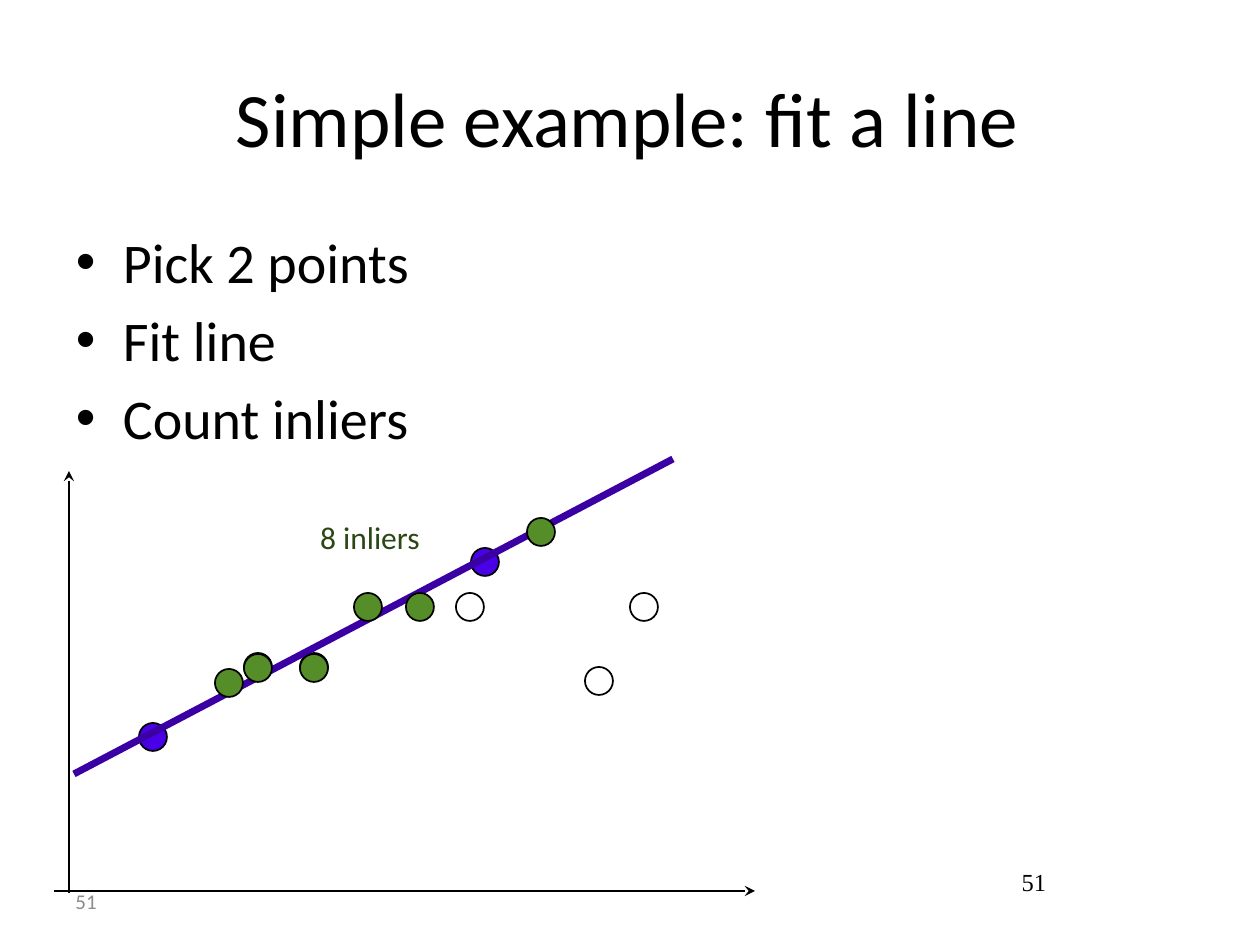
from pptx import Presentation
from pptx.dml.color import RGBColor
from pptx.enum.shapes import MSO_CONNECTOR, MSO_SHAPE
from pptx.enum.text import MSO_ANCHOR, PP_ALIGN
from pptx.oxml.ns import qn
from pptx.util import Pt
from lxml.etree import SubElement

PX_PER_INCH = 126
COLORS = {
    "black": "000000",
    "gray": "8C8C8C",
    "open": "FFFFFF",
    "picked": "4A00E6",
    "fitted": "3B00A4",
    "inlier": "558E28",
    "label": "2B4714",
}
DOT = 28

# Top-left corners of the dots, relative to the plot
OPEN_DOTS = [(246, 194), (402, 134), (190, 194), (531, 208), (576, 134)]
PICKED_DOTS = [(85, 264), (417, 89)]
INLIER_DOTS = [(161, 210), (190, 195), (246, 195), (300, 134), (352, 134), (473, 59)]


def px(value):
    return round(value * 914400 / PX_PER_INCH)


def color(name):
    return RGBColor.from_string(COLORS[name])


def format_text(frame, size, color_name, font="Calibri", align=PP_ALIGN.LEFT):
    for paragraph in frame.paragraphs:
        paragraph.alignment = align
        for run in paragraph.runs:
            run.font.name = font
            run.font.size = Pt(size)
            run.font.color.rgb = color(color_name)


def set_insets(frame, left, top, right, bottom):
    frame.margin_left, frame.margin_top = px(left), px(top)
    frame.margin_right, frame.margin_bottom = px(right), px(bottom)


def add_text(slide, box, text, size, color_name, **style):
    frame = slide.shapes.add_textbox(*map(px, box)).text_frame
    frame.text = text
    frame.word_wrap = True
    format_text(frame, size, color_name, **style)
    return frame


def add_line(slide, start, end, color_name, width, arrow=False):
    line = slide.shapes.add_connector(MSO_CONNECTOR.STRAIGHT, *map(px, start + end))
    line.line.color.rgb = color(color_name)
    line.line.width = Pt(width)
    if arrow:
        SubElement(line.line._get_or_add_ln(), qn("a:headEnd"), type="stealth")
    SubElement(line._element.spPr, qn("a:effectLst"))


def add_dots(shapes, left, top, corners, color_name):
    for x, y in corners:
        dot = shapes.add_shape(MSO_SHAPE.OVAL, px(left + x), px(top + y), px(DOT), px(DOT))
        dot.shadow.inherit = False
        dot.fill.solid()
        dot.fill.fore_color.rgb = color(color_name)
        dot.line.color.rgb = color("black")
        dot.line.width = Pt(1)


def add_title(slide, box, text):
    title = slide.shapes.title
    title.left, title.top, title.width, title.height = map(px, box)
    frame = title.text_frame
    frame.text = text
    frame.vertical_anchor = MSO_ANCHOR.MIDDLE
    set_insets(frame, 13, 6, 18, 6)
    format_text(frame, 44, "black", align=PP_ALIGN.CENTER)


def add_steps(slide, box, steps):
    frame = add_text(slide, box, "\n".join(steps), 32, "black")
    set_insets(frame, 13, 6, 18, 6)
    for paragraph in frame.paragraphs:
        properties = paragraph._p.get_or_add_pPr()
        properties.set("marL", str(px(47)))
        properties.set("indent", str(-px(47)))
        spacing = SubElement(properties, qn("a:spcBef"))
        SubElement(spacing, qn("a:spcPct"), val="20000")
        SubElement(properties, qn("a:buFont"), typeface="Arial")
        SubElement(properties, qn("a:buChar"), char="•")


def add_plot(slide, box):
    left, top, width, height = box

    # Axes, with the arrowhead at the start of each
    add_line(slide, (left + 15, top + 12), (left + 15, top + height), "black", 1, arrow=True)
    add_line(slide, (left + width, top + 432), (left, top + 432), "black", 1, arrow=True)

    # Sample points and the line through the two picked ones
    add_dots(slide.shapes, left, top, OPEN_DOTS, "open")
    add_dots(slide.shapes, left, top, PICKED_DOTS, "picked")
    add_line(slide, (left + 20, top + 315), (left + 619, top), "fitted", 4)

    # Inliers and their count
    label = add_text(slide, (left + 261, top + 59, 156, 50), "8 inliers", 18, "label")
    set_insets(label, 5, 0, 5, 0)
    inliers = slide.shapes.add_group_shape()
    add_dots(inliers.shapes, left, top, INLIER_DOTS, "inlier")


def add_page_numbers(slide, number):
    footer = add_text(slide, (63, 876, 294, 50), number, 12, "gray")
    footer.vertical_anchor = MSO_ANCHOR.MIDDLE

    # The narrow box needs its full width to keep the number on one line
    corner = add_text(slide, (1014, 861, 40, 40), number, 14, "black",
                      font="Times New Roman", align=PP_ALIGN.CENTER)
    set_insets(corner, 0, 6, 0, 6)


def main():
    presentation = Presentation()
    presentation.slide_width, presentation.slide_height = px(1260), px(945)
    slide = presentation.slides.add_slide(presentation.slide_layouts[5])
    add_title(slide, (63, 38, 1134, 158), "Simple example: fit a line")
    add_steps(slide, (63, 221, 1134, 624), ["Pick 2 points", "Fit line", "Count inliers"])
    add_page_numbers(slide, "51")
    add_plot(slide, (54, 459, 701, 434))
    presentation.save("out.pptx")


if __name__ == "__main__":
    main()
